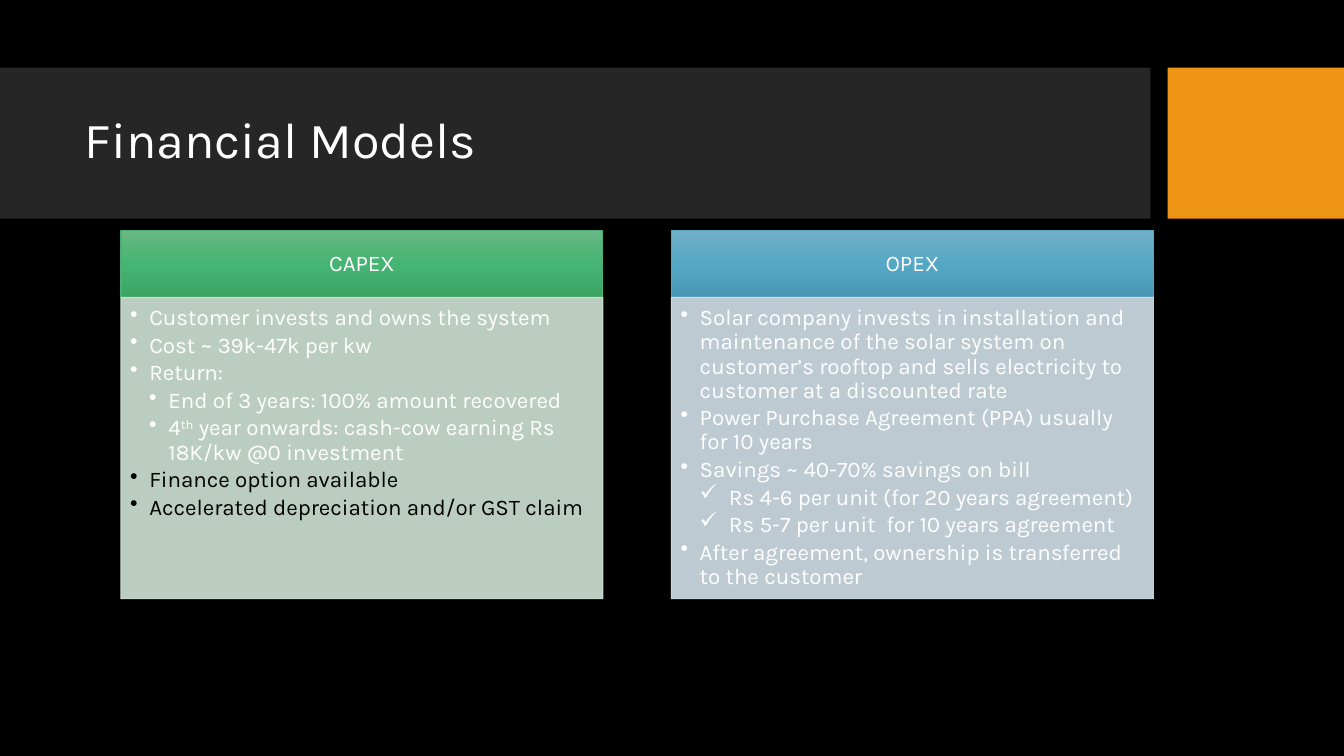
import copy

import pptx
import pptx.dml.color
import pptx.enum.shapes
import pptx.enum.text
import pptx.oxml
import pptx.oxml.ns
import pptx.util
from pptx.util import Inches

FONT = "Karla"
HUES = {
    "black": "000000", "white": "FFFFFF", "band": "262626", "accent": "F09415",
    "capex": ["67B884", "46B472", "3AA464"], "capex_line": "4BAF73", "capex_body": "D0E3D5",
    "opex": ["71B0C8", "55A8C5", "4798B4"], "opex_line": "5AA6C0", "opex_body": "D2E1E8",
}
COL_W, HEAD_H, BODY_H, TOP = 4.78, 0.66, 2.99, 2.29
DOT, TICK = "•", "✓"
# left margin and hanging indent of each kind of list line
INDENT = {"main": (0.19, 0.19), "sub": (0.38, 0.19), "tick": (0.48, 0.29)}

# Each line is its kind, its colour and its runs; "^" opens a raised run.
CAPEX = [
    ("main", "white", ["Customer invests and owns the system"]),
    ("main", "white", ["Cost ~ 39k-47k per kw"]),
    ("main", "white", ["Return:"]),
    ("sub", "white", ["End of 3 years: 100% amount recovered"]),
    ("sub", "white", ["4", "^th", " year onwards: cash-cow earning Rs 18K/kw @0 investment"]),
    ("main", "black", ["Finance option available"]),
    ("main", "black", ["Accelerated depreciation and/or GST claim"]),
]
OPEX = [
    ("main", "white", ["Solar company invests in installation and maintenance of the solar system "
                       "on customer’s rooftop and sells electricity to customer at a discounted rate"]),
    ("main", "white", ["Power Purchase Agreement (PPA) usually for 10 years"]),
    ("main", "white", ["Savings ~ 40-70% savings on bill"]),
    ("tick", "white", ["Rs 4-6 per unit (for 20 years agreement)"]),
    ("tick", "white", ["Rs 5-7 per unit  for 10 years agreement"]),
    ("main", "white", ["After agreement, ownership is transferred to the customer"]),
]


def rgb(name):
    return pptx.dml.color.RGBColor.from_string(HUES.get(name, name))


def node(tag, **attrs):
    item = pptx.oxml.parse_xml(f"<a:{tag} {pptx.oxml.ns.nsdecls('a')}/>")
    for key, value in attrs.items():
        item.set(key, str(value))
    return item


def format_all(target, values):
    for key, value in values.items():
        setattr(target, key, value)


def add_rect(slide, left, top, width, height, fill=None, line=None):
    rect = slide.shapes.add_shape(pptx.enum.shapes.MSO_SHAPE.RECTANGLE, Inches(left),
                                  Inches(top), Inches(width), Inches(height))
    rect.shadow.inherit = False
    if fill:
        rect.fill.solid()
        rect.fill.fore_color.rgb = rgb(fill)
    if line:
        rect.line.color.rgb = rgb(line)
        rect.line.width = pptx.util.Pt(0.75)
    else:
        rect.line.fill.background()
    return rect


def set_frame(shape, anchor, insets):
    """Wrap the text, anchor it and set left, top, right and bottom insets."""
    sides = ("margin_left", "margin_top", "margin_right", "margin_bottom")
    format_all(shape.text_frame, {
        "word_wrap": True, "vertical_anchor": anchor,
        **{side: Inches(inset) for side, inset in zip(sides, insets)}})
    return shape.text_frame


def add_run(para, text, size, hue="white"):
    run = para.add_run()
    run.text = text.lstrip("^")
    format_all(run.font, {"name": FONT, "size": pptx.util.Pt(size)})
    run.font.color.rgb = rgb(hue)
    if text.startswith("^"):
        run.font._element.set("baseline", "30000")


def add_title(slide, text):
    title = slide.shapes.title
    format_all(title, {"left": Inches(0.74), "top": Inches(0.82),
                       "width": Inches(10.51), "height": Inches(1.18)})
    frame = set_frame(title, pptx.enum.text.MSO_ANCHOR.MIDDLE, (0.1, 0.05, 0.1, 0.05))
    para = frame.paragraphs[0]
    format_all(para, {"alignment": pptx.enum.text.PP_ALIGN.LEFT, "line_spacing": 0.9})
    add_run(para, text, 36)
    for left, width, hue in ((0, 11.41, "band"), (11.58, 1.75, "accent")):
        bar = add_rect(slide, left, 0.67, width, 1.5, hue)
        title.element.addprevious(bar.element)


def shade(shape, hues):
    """Fill the shape with an even gradient from top to bottom."""
    shape.fill.gradient()
    shape.fill.gradient_angle = 270
    stops = shape.element.spPr.find(".//" + pptx.oxml.ns.qn("a:gsLst"))
    stops.append(copy.deepcopy(stops[-1]))
    for index, (stop, hue) in enumerate(zip(shape.fill.gradient_stops, hues)):
        stop.color.rgb = rgb(hue)
        stop.position = index / (len(hues) - 1)


def add_shadow(shape):
    outer = node("outerShdw", blurRad=pptx.util.Pt(4.5), dist=pptx.util.Pt(1.5),
                 dir=5400000, algn="ctr", rotWithShape=0)
    tint = node("srgbClr", val=HUES["black"])
    tint.append(node("alpha", val=63000))
    outer.append(tint)
    shape.element.spPr.find(pptx.oxml.ns.qn("a:effectLst")).append(outer)


def add_head(slide, left, text, key):
    head = add_rect(slide, left, TOP, COL_W, HEAD_H, line=key + "_line")
    shade(head, HUES[key])
    add_shadow(head)
    frame = set_frame(head, pptx.enum.text.MSO_ANCHOR.MIDDLE, (0.12, 0.07, 0.12, 0.07))
    para = frame.paragraphs[0]
    format_all(para, {"alignment": pptx.enum.text.PP_ALIGN.CENTER, "line_spacing": 0.9})
    add_run(para, text, 16)


def add_body(slide, left, lines, key):
    hue = key + "_body"
    body = add_rect(slide, left, TOP + HEAD_H, COL_W, BODY_H, hue, hue)
    for tint in body.element.spPr.iter(pptx.oxml.ns.qn("a:srgbClr")):
        tint.append(node("alpha", val=90000))
    frame = set_frame(body, pptx.enum.text.MSO_ANCHOR.TOP, (0.09, 0.09, 0.12, 0.14))
    for index, (kind, color, runs) in enumerate(lines):
        para = frame.add_paragraph() if index else frame.paragraphs[0]
        margin, hang = INDENT[kind]
        props = para._p.get_or_add_pPr()
        props.set("marL", str(Inches(margin)))
        props.set("indent", str(-Inches(hang)))
        props.append(node("buChar", char=TICK if kind == "tick" else DOT))
        format_all(para, {"level": 0 if kind == "main" else 1, "line_spacing": 0.9,
                          "space_after": pptx.util.Pt(2.4),
                          "alignment": pptx.enum.text.PP_ALIGN.LEFT})
        for text in runs:
            add_run(para, text, 16, color)


def main():
    deck = pptx.Presentation()
    format_all(deck, {"slide_width": Inches(13.33), "slide_height": Inches(7.5)})
    slide = deck.slides.add_slide(deck.slide_layouts[5])
    slide.background.fill.solid()
    slide.background.fill.fore_color.rgb = rgb("black")
    add_title(slide, "Financial Models")
    for left, name, lines in ((1.2, "CAPEX", CAPEX), (6.66, "OPEX", OPEX)):
        add_head(slide, left, name, name.lower())
        add_body(slide, left, lines, name.lower())
    deck.save("out.pptx")


if __name__ == "__main__":
    main()
